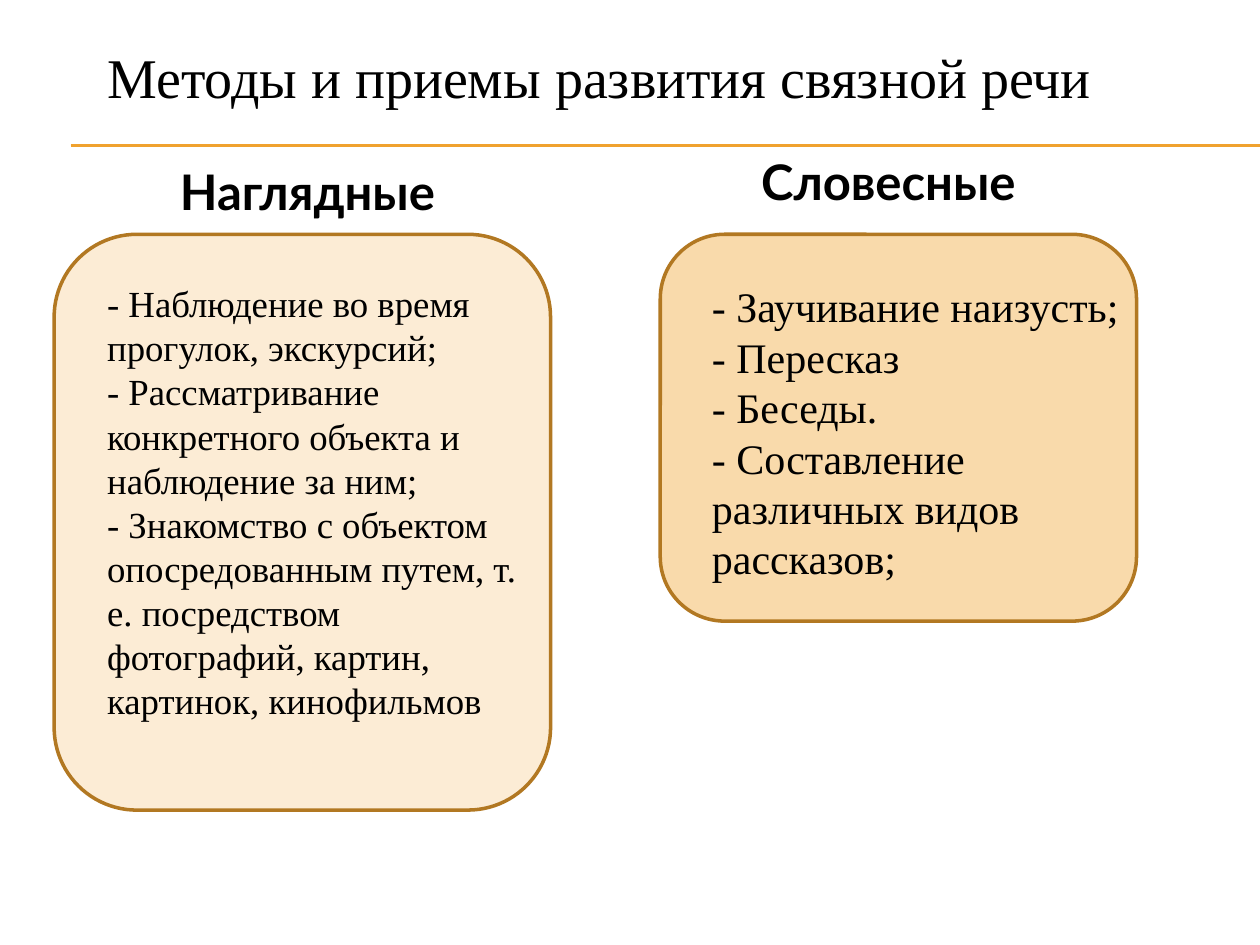
from dataclasses import dataclass

from lxml.etree import SubElement
from pptx import Presentation
from pptx.dml.color import RGBColor
from pptx.enum.shapes import MSO_CONNECTOR, MSO_SHAPE
from pptx.enum.text import MSO_ANCHOR, MSO_AUTO_SIZE, PP_ALIGN as Align
from pptx.oxml.ns import qn
from pptx.util import Inches, Pt

COLUMNS, ROWS = 100, 75
SERIF, SANS = "Times New Roman", "Lato"
INK, RULE, BORDER = "000000", "F0A22E", "B27822"


@dataclass(frozen=True)
class Box:
    """A rectangle in grid columns and rows."""
    left: float
    top: float
    width: float
    height: float


@dataclass(frozen=True)
class Style:
    """The look of a block of text."""
    font: str
    size: float
    bold: bool = False
    align: Align = Align.LEFT


@dataclass(frozen=True)
class Method:
    """A group of teaching methods with its heading, card and list."""
    heading: str
    heading_box: Box
    card_box: Box
    card_fill: str
    list_box: Box
    list_size: float
    items: tuple[str, ...]


METHODS = (
    Method("Наглядные", Box(5.9, 12.3, 37, 5.7), Box(4.3, 18.6, 39.4, 45.7), "FCECD5",
           Box(7.5, 21.8, 34.6, 36.4), 21, (
               "- Наблюдение во время прогулок, экскурсий;",
               "- Рассматривание конкретного объекта и наблюдение за ним;",
               "- Знакомство с объектом опосредованным путем, т. е. посредством "
               "фотографий, картин, картинок, кинофильмов")),
    Method("Словесные", Box(52.4, 11.5, 36.2, 5.7), Box(52.4, 18.6, 37.8, 30.7), "F9DAAB",
           Box(55.5, 21.8, 36.2, 28.3), 24, (
               "- Заучивание наизусть;",
               "- Пересказ",
               "- Беседы.",
               "- Составление различных видов рассказов;")),
)


def color(value: str) -> RGBColor:
    """Turn a hex string into a colour."""
    return RGBColor.from_string(value)


def across(columns: float) -> int:
    """Convert grid columns to a length."""
    return int(Inches(10) * columns / COLUMNS)


def down(rows: float) -> int:
    """Convert grid rows to a length."""
    return int(Inches(7.5) * rows / ROWS)


def write(holder, box: Box, style: Style, lines: tuple[str, ...]) -> None:
    """Move a placeholder to its box and fill it with formatted paragraphs."""
    holder.left, holder.top = across(box.left), down(box.top)
    holder.width, holder.height = across(box.width), down(box.height)
    frame = holder.text_frame
    frame.word_wrap = True
    frame.auto_size = MSO_AUTO_SIZE.NONE
    frame.vertical_anchor = MSO_ANCHOR.TOP
    for number, line in enumerate(lines):
        paragraph = frame.add_paragraph() if number else frame.paragraphs[0]
        paragraph.alignment = style.align
        paragraph.space_before = Pt(0)
        properties = paragraph._p.get_or_add_pPr()
        properties.set("marL", "0")
        properties.set("indent", "0")
        SubElement(properties, qn("a:buNone"))
        run = paragraph.add_run()
        run.text = line
        run.font.name, run.font.size, run.font.bold = style.font, Pt(style.size), style.bold
        run.font.color.rgb = color(INK)


def draw_card(slide, box: Box, fill: str) -> None:
    """Draw a rounded card behind the text."""
    card = slide.shapes.add_shape(MSO_SHAPE.ROUNDED_RECTANGLE, across(box.left), down(box.top),
                                  across(box.width), down(box.height))
    card.shadow.inherit = False
    card.fill.solid()
    card.fill.fore_color.rgb = color(fill)
    card.line.color.rgb = color(BORDER)
    card.line.width = Pt(2)
    slide.shapes._spTree.insert(2, card._element)


def draw_rule(slide, row: float) -> None:
    """Draw a thin line under the title up to the right edge."""
    rule = slide.shapes.add_connector(MSO_CONNECTOR.STRAIGHT, across(5.6), down(row),
                                      across(COLUMNS), down(row))
    rule.line.color.rgb = color(RULE)
    rule.line.width = Pt(0.75)
    SubElement(rule._element.spPr, qn("a:effectLst"))


def main() -> None:
    """Build the slide and save it."""
    deck = Presentation()
    deck.slide_width, deck.slide_height = Inches(10), Inches(7.5)
    slide = deck.slides.add_slide(deck.slide_layouts.get_by_name("Comparison"))
    title, *bodies = slide.placeholders
    write(title, Box(7.5, 2.9, 89, 6.4), Style(SERIF, 32),
          ("Методы и приемы развития связной речи",))
    for row in (11.5, 11.6):
        draw_rule(slide, row)
    for method, heading, listing in zip(METHODS, bodies[::2], bodies[1::2]):
        draw_card(slide, method.card_box, method.card_fill)
        write(heading, method.heading_box, Style(SANS, 28, True, Align.CENTER), (method.heading,))
        write(listing, method.list_box, Style(SERIF, method.list_size), method.items)
    deck.save("out.pptx")


if __name__ == "__main__":
    main()
